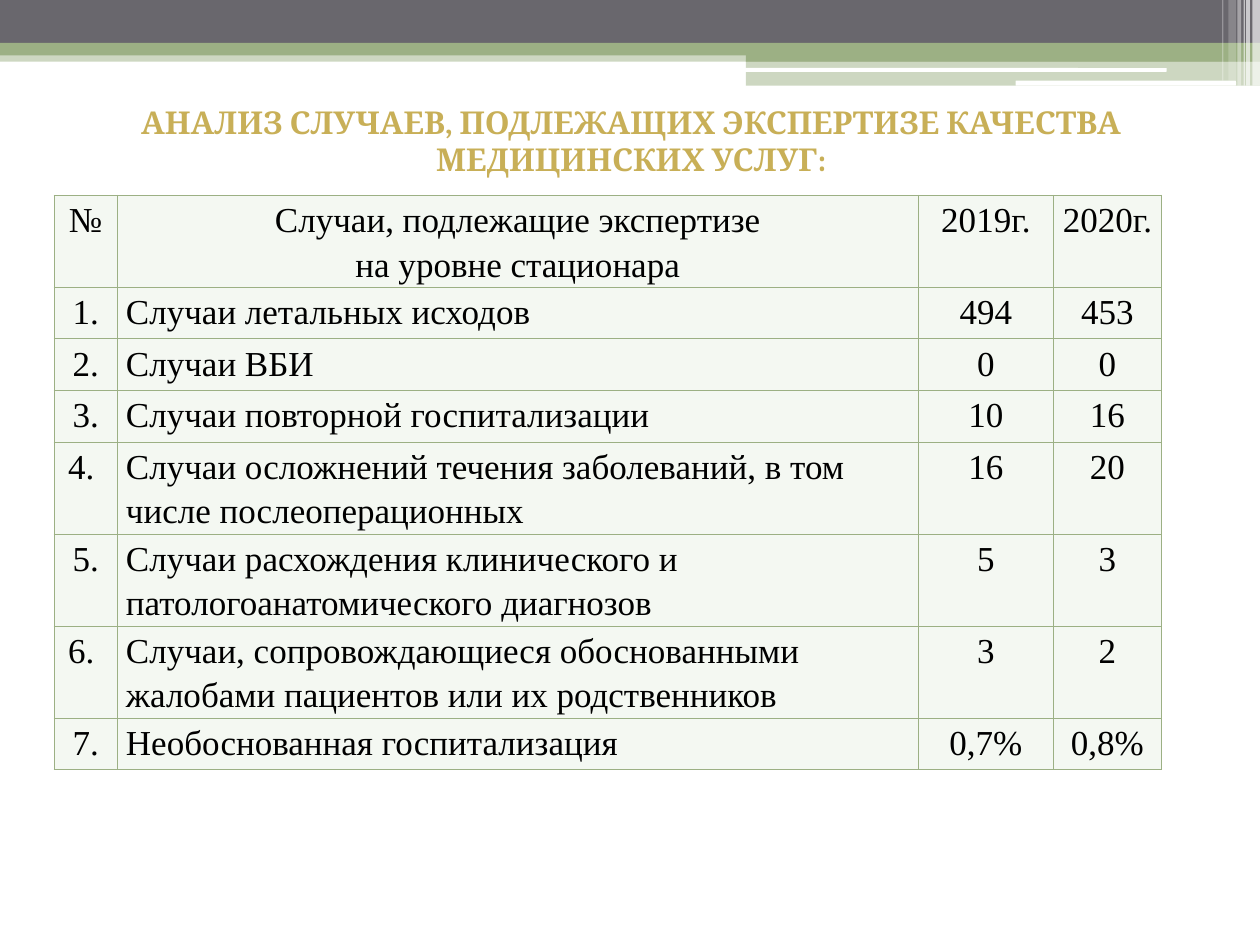
from pptx import Presentation
from pptx import util as u
from pptx.dml.color import RGBColor
from pptx.enum import shapes, text
from pptx.oxml.ns import qn
from lxml import etree

COLORS = {
    "slate": "69676D",
    "green": "9CB084",
    "white": "FFFFFF",
    "gold": "C8AF57",
    "cell": "F4F8F2",
    "ink": "000000",
}
TITLE = "АНАЛИЗ СЛУЧАЕВ, ПОДЛЕЖАЩИХ ЭКСПЕРТИЗЕ КАЧЕСТВА МЕДИЦИНСКИХ УСЛУГ:"
CASES = [
    ("№", "Случаи, подлежащие экспертизе\nна уровне стационара", "2019г.", "2020г."),
    ("1.", "Случаи летальных исходов", "494", "453"),
    ("2.", "Случаи ВБИ", "0", "0"),
    ("3.", "Случаи повторной госпитализации", "10", "16"),
    ("4. ", "Случаи осложнений течения заболеваний, в том числе послеоперационных", "16", "20"),
    ("5.", "Случаи расхождения клинического и патологоанатомического диагнозов", "5", "3"),
    ("6. ", "Случаи, сопровождающиеся обоснованными жалобами пациентов или их родственников", "3", "2"),
    ("7.", "Необоснованная госпитализация", "0,7%", "0,8%"),
]
COLUMN_WIDTHS = [0.5, 6.36, 1.07, 0.86]
ONE_LINE, TWO_LINES = 0.41, 0.73
ROW_HEIGHTS = [TWO_LINES] + [ONE_LINE] * 3 + [TWO_LINES] * 3 + [ONE_LINE]
BANDS = [
    ((0, 0.4, 10, 0.09), "green", 50),
    ((0, 0, 10, 0.34), "slate", 100),
    ((0, 0.34, 10, 0.1), "green", 100),
    ((5.92, 0.39, 4.08, 0.1), "green", 100),
    ((5.92, 0.48, 4.08, 0.2), "green", 50),
]
GAPS = [(5.91, 0.54, 3.35, 0.03), (8.06, 0.64, 1.75, 0.04)]
STRIPES = [
    (9.94, 0.06, 0.68, 65),
    (9.89, 0.03, 0.68, 65),
    (9.87, 0.01, 0.68, 60),
    (9.82, 0.03, 0.68, 40),
    (9.75, 0.06, 0.64, 20),
    (9.7, 0.01, 0.64, 30),
]


class SlideBuilder:
    """Holds the colours and the current slide and adds its elements."""

    def __init__(self, slide, colors):
        self.slide = slide
        self.colors = colors

    def rgb(self, name):
        return RGBColor.from_string(self.colors[name])

    def style(self, paragraph, font_name, size, color, bold=False):
        for run in paragraph.runs:
            run.font.name = font_name
            run.font.size = u.Pt(size)
            run.font.bold = bold
            run.font.color.rgb = self.rgb(color)

    def bar(self, box, color, opacity=100, rounded=False):
        kind = shapes.MSO_SHAPE.ROUNDED_RECTANGLE if rounded else shapes.MSO_SHAPE.RECTANGLE
        bar = self.slide.shapes.add_shape(kind, *map(u.Inches, box))
        bar.shadow.inherit = False
        bar.line.fill.background()
        bar.fill.solid()
        bar.fill.fore_color.rgb = self.rgb(color)
        if opacity < 100:
            shade = bar.fill._xPr.find(f".//{qn('a:srgbClr')}")
            etree.SubElement(shade, qn("a:alpha"), val=str(opacity * 1000))

    def title(self, wording, box):
        title = self.slide.shapes.title
        title.left, title.top, title.width, title.height = map(u.Inches, box)
        frame = title.text_frame
        frame.text = wording
        frame.word_wrap = True
        frame.auto_size = text.MSO_AUTO_SIZE.NONE
        frame.vertical_anchor = text.MSO_ANCHOR.MIDDLE
        frame.margin_bottom = u.Inches(0.35)
        heading = frame.paragraphs[0]
        heading.alignment = text.PP_ALIGN.CENTER
        self.style(heading, "Cambria", 18, "gold", bold=True)

    def border(self, cell):
        properties = cell._tc.get_or_add_tcPr()
        for side in ("lnL", "lnR", "lnT", "lnB"):
            edge = etree.SubElement(properties, qn(f"a:{side}"), w=str(u.Pt(0.75)))
            fill = etree.SubElement(edge, qn("a:solidFill"))
            etree.SubElement(fill, qn("a:srgbClr"), val=self.colors["green"])

    def cell(self, cell, wording, alignment):
        cell.text = wording
        cell.margin_left = cell.margin_right = u.Inches(0.07)
        cell.margin_top = cell.margin_bottom = 0
        self.border(cell)
        cell.fill.solid()
        cell.fill.fore_color.rgb = self.rgb("cell")
        for paragraph in cell.text_frame.paragraphs:
            paragraph.alignment = alignment
            paragraph.line_spacing = 1.15
            self.style(paragraph, "Times New Roman", 20, "ink")

    def table(self, rows, left, top, widths, heights):
        box = map(u.Inches, (left, top, sum(widths), sum(heights)))
        table = self.slide.shapes.add_table(len(rows), len(widths), *box).table
        table.first_row = table.horz_banding = False
        for column, width in zip(table.columns, widths):
            column.width = u.Inches(width)
        for row, height in zip(table.rows, heights):
            row.height = u.Inches(height)
        for r, row in enumerate(rows):
            for c, wording in enumerate(row):
                is_case_name = r > 0 and c == 1
                alignment = text.PP_ALIGN.LEFT if is_case_name else text.PP_ALIGN.CENTER
                self.cell(table.cell(r, c), wording, alignment)


def main():
    deck = Presentation()
    deck.slide_width, deck.slide_height = u.Inches(10), u.Inches(7.5)
    builder = SlideBuilder(deck.slides.add_slide(deck.slide_layouts[5]), COLORS)
    for box, color, opacity in BANDS:
        builder.bar(box, color, opacity)
    for box in GAPS:
        builder.bar(box, "white", rounded=True)
    for left, width, height, opacity in STRIPES:
        builder.bar((left, 0, width, height), "white", opacity)
    builder.title(TITLE, (0.43, 0.68, 9.16, 1.17))
    builder.table(CASES, 0.43, 1.55, COLUMN_WIDTHS, ROW_HEIGHTS)
    deck.save("out.pptx")


if __name__ == "__main__":
    main()
